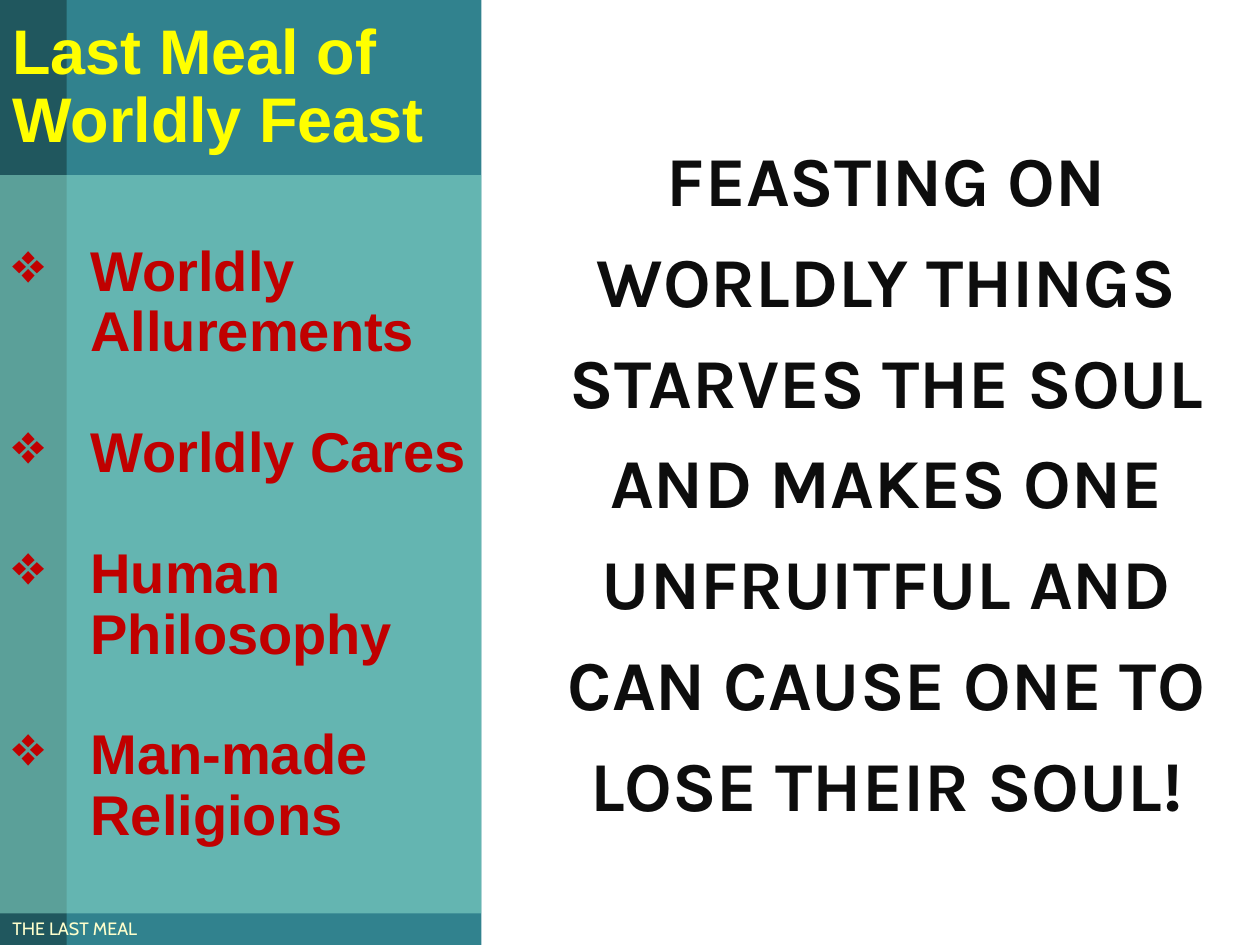
from dataclasses import dataclass

from lxml.etree import SubElement
from pptx import Presentation
from pptx.dml.color import RGBColor
from pptx.enum.shapes import MSO_SHAPE
from pptx.enum.text import MSO_ANCHOR, PP_ALIGN
from pptx.oxml.ns import qn
from pptx.util import Inches, Pt

SLIDE_WIDTH, SLIDE_HEIGHT = Inches(10), Inches(7.5)
COLORS = {
    "sidebar": "31828E", "strip": "20575E", "panel": "97E9D5",
    "title": "FFFF00", "footer": "FFFFCC", "message": "0D0D0D", "topic": "C00000",
}

# Column and row edges, in percent of the slide's width and height
SIDEBAR_RIGHT, STRIP_RIGHT, FOOTER_RIGHT = 38.2, 5.3, 41.6
HEADER_BOTTOM, FOOTER_TOP = 18.53, 96.67

TOPICS = ["Worldly Allurements", "Worldly Cares", "Human Philosophy", "Man-made Religions"]
MESSAGE = ("FEASTING ON WORLDLY THINGS STARVES THE SOUL AND MAKES ONE "
           "UNFRUITFUL AND CAN CAUSE ONE TO LOSE THEIR SOUL!")


@dataclass(frozen=True)
class Area:
    left: float
    top: float
    right: float
    bottom: float

    def box(self) -> tuple[int, int, int, int]:
        return (int(SLIDE_WIDTH * self.left / 100),
                int(SLIDE_HEIGHT * self.top / 100),
                int(SLIDE_WIDTH * (self.right - self.left) / 100),
                int(SLIDE_HEIGHT * (self.bottom - self.top) / 100))


@dataclass(frozen=True)
class TextStyle:
    font: str
    size: float
    color: str
    bold: bool = True
    leading: float = 0.9
    align: PP_ALIGN = PP_ALIGN.LEFT
    margin: float = 0
    indent: float = 0
    bullet: str = ""
    lines_between: int = 0

    def line_height(self) -> Pt:
        return Pt(round(self.size * 1.2 * self.leading, 2))


def add_block(slide, area: Area, color: str, opacity: int = 100):
    shape = slide.shapes.add_shape(MSO_SHAPE.RECTANGLE, *area.box())
    shape.shadow.inherit = False
    shape.line.fill.background()
    shape.fill.solid()
    shape.fill.fore_color.rgb = RGBColor.from_string(COLORS[color])
    if opacity < 100:
        color_element = shape.fill._xPr.find(".//" + qn("a:srgbClr"))
        SubElement(color_element, qn("a:alpha"), val=str(opacity * 1000))
    return shape


def write_text(shape, texts: list[str], style: TextStyle) -> None:
    frame = shape.text_frame
    frame.word_wrap = True
    frame.vertical_anchor = MSO_ANCHOR.MIDDLE
    for index, text in enumerate(texts):
        paragraph = frame.add_paragraph() if index else frame.paragraphs[0]
        paragraph.text = text
        paragraph.alignment = style.align
        paragraph.line_spacing = style.line_height()
        if index:
            paragraph.space_before = style.line_height() * style.lines_between
        properties = paragraph._p.get_or_add_pPr()
        properties.set("marL", str(Inches(style.margin)))
        properties.set("indent", str(Inches(style.indent)))
        if style.bullet:
            SubElement(properties, qn("a:buChar"), char=style.bullet)
        font = paragraph.font
        font.name, font.size, font.bold = style.font, Pt(style.size), style.bold
        font.color.rgb = RGBColor.from_string(COLORS[style.color])


def add_text(slide, area: Area, text: str, style: TextStyle) -> None:
    write_text(slide.shapes.add_textbox(*area.box()), [text], style)


def main() -> None:
    presentation = Presentation()
    presentation.slide_width, presentation.slide_height = SLIDE_WIDTH, SLIDE_HEIGHT
    slide = presentation.slides.add_slide(presentation.slide_layouts[6])

    # Sidebar with its dark edge strip
    add_block(slide, Area(0, 0, SIDEBAR_RIGHT, 100), "sidebar")
    add_block(slide, Area(0, 0, STRIP_RIGHT, 100), "strip")

    # Footer, title and main message
    add_text(slide, Area(0, FOOTER_TOP, FOOTER_RIGHT, 100), "THE LAST MEAL",
             TextStyle("Cabin", 10.2, "footer", bold=False))
    add_text(slide, Area(0, 0, SIDEBAR_RIGHT, HEADER_BOTTOM), "Last Meal of Worldly Feast",
             TextStyle("Arial", 36, "title"))
    add_text(slide, Area(SIDEBAR_RIGHT, 0, 100, 100), MESSAGE,
             TextStyle("Karla", 40, "message", leading=1.2,
                       align=PP_ALIGN.CENTER, margin=0.25))

    # Translucent panel with the list of topics
    panel = add_block(slide, Area(0, HEADER_BOTTOM, SIDEBAR_RIGHT, FOOTER_TOP), "panel", 50)
    write_text(panel, TOPICS,
               TextStyle("Arial", 32, "topic", margin=0.62, indent=-0.62,
                         bullet="❖", lines_between=1))

    presentation.save("out.pptx")


if __name__ == "__main__":
    main()
